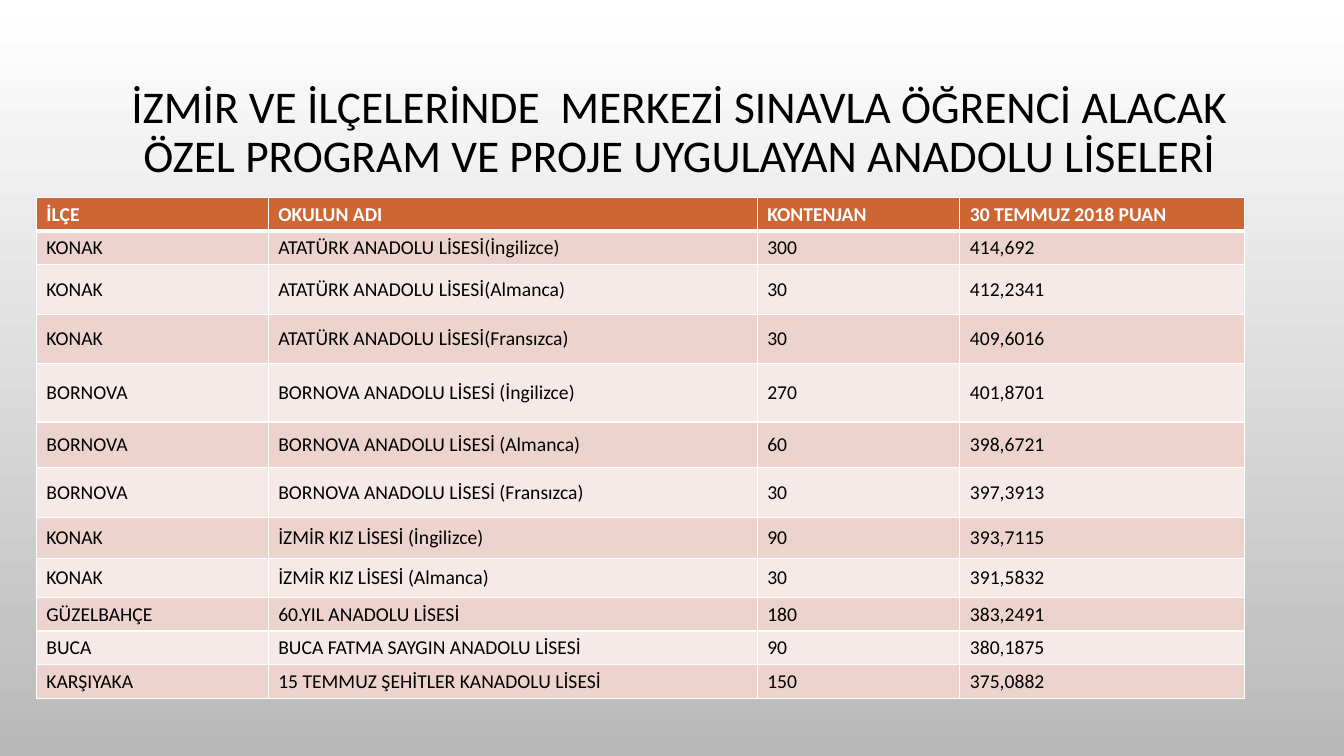
from lxml.etree import SubElement
from pptx import Presentation
from pptx.dml.color import RGBColor
from pptx.enum.text import MSO_ANCHOR, PP_ALIGN
from pptx.oxml.ns import qn
from pptx.util import Inches, Pt

COLORS = {
    "top": "FFFFFF",
    "base": "B9B9B9",
    "text": "000000",
    "head": "CE6633",
    "odd": "EDD3CE",
    "even": "F6EAE8",
    "line": "FFFFFF",
}
TITLE = ("İZMİR VE İLÇELERİNDE  MERKEZİ SINAVLA ÖĞRENCİ ALACAK "
         "ÖZEL PROGRAM VE PROJE UYGULAYAN ANADOLU LİSELERİ")
WIDTHS = [2.3, 4.85, 2.01, 2.82]
HEIGHTS = [0.26, 0.29, 0.49, 0.49, 0.58, 0.45, 0.5, 0.4, 0.39, 0.31, 0.31, 0.31]
SCHOOLS = [
    ("İLÇE", "OKULUN ADI", "KONTENJAN", "30 TEMMUZ 2018 PUAN"),
    ("KONAK", "ATATÜRK ANADOLU LİSESİ(İngilizce)", "300", "414,692"),
    ("KONAK", "ATATÜRK ANADOLU LİSESİ(Almanca)", "30", "412,2341"),
    ("KONAK", "ATATÜRK ANADOLU LİSESİ(Fransızca)", "30", "409,6016"),
    ("BORNOVA", "BORNOVA ANADOLU LİSESİ (İngilizce)", "270", "401,8701"),
    ("BORNOVA", "BORNOVA ANADOLU LİSESİ (Almanca)", "60", "398,6721"),
    ("BORNOVA", "BORNOVA ANADOLU LİSESİ (Fransızca)", "30", "397,3913"),
    ("KONAK", "İZMİR KIZ LİSESİ (İngilizce)", "90", "393,7115"),
    ("KONAK", "İZMİR KIZ LİSESİ (Almanca)", "30", "391,5832"),
    ("GÜZELBAHÇE", "60.YIL ANADOLU LİSESİ", "180", "383,2491"),
    ("BUCA", "BUCA FATMA SAYGIN ANADOLU LİSESİ", "90", "380,1875"),
    ("KARŞIYAKA", "15 TEMMUZ ŞEHİTLER KANADOLU LİSESİ", "150", "375,0882"),
]


class Deck:
    """Hold the style and the current slide."""

    def __init__(self, slide, font):
        self.slide = slide
        self.font = font

    def color(self, name):
        return RGBColor.from_string(COLORS[name])

    def backdrop(self, top, base):
        fill = self.slide.background.fill
        fill.gradient()
        fill.gradient_angle = 270
        for stop, name in zip(fill.gradient_stops, (top, base)):
            stop.color.rgb = self.color(name)

    def run(self, para, text, size, color, bold=False):
        run = para.add_run()
        run.text = text
        run.font.name = self.font
        run.font.size = Pt(size)
        run.font.bold = bold
        run.font.color.rgb = self.color(color)

    def title(self, text, left, top, width, height):
        box = self.slide.shapes.add_textbox(
            Inches(left), Inches(top), Inches(width), Inches(height))
        frame = box.text_frame
        frame.word_wrap = True
        frame.vertical_anchor = MSO_ANCHOR.MIDDLE
        para = frame.paragraphs[0]
        para.alignment = PP_ALIGN.CENTER
        para.line_spacing = 0.9
        self.run(para, text, 32.4, "text")

    def border(self, cell, side, width):
        props = cell._tc.get_or_add_tcPr()
        line = SubElement(props, qn(f"a:ln{side}"), w=str(Pt(width)))
        fill = SubElement(line, qn("a:solidFill"))
        SubElement(fill, qn("a:srgbClr"), val=COLORS["line"])

    def cell(self, cell, text, row):
        head = row == 0
        thick = {"T": 3 if row == 1 else 1, "B": 3 if head else 1}
        for side in "LRTB":
            self.border(cell, side, thick.get(side, 1))
        cell.fill.solid()
        band = "head" if head else "odd" if row % 2 else "even"
        cell.fill.fore_color.rgb = self.color(band)
        cell.vertical_anchor = MSO_ANCHOR.TOP if head else MSO_ANCHOR.MIDDLE
        ink = "line" if head else "text"
        self.run(cell.text_frame.paragraphs[0], text, 14, ink, head)

    def table(self, data, left, top, widths, heights):
        table = self.slide.shapes.add_table(
            len(data), len(widths), Inches(left), Inches(top),
            Inches(sum(widths)), Inches(sum(heights))).table
        for col, width in zip(table.columns, widths):
            col.width = Inches(width)
        for row, height in zip(table.rows, heights):
            row.height = Inches(height)
        for r, line in enumerate(data):
            for c, text in enumerate(line):
                self.cell(table.cell(r, c), text, r)


def main():
    prs = Presentation()
    prs.slide_width = Inches(13.33)
    prs.slide_height = Inches(7.5)
    deck = Deck(prs.slides.add_slide(prs.slide_layouts[6]), "Calibri")
    deck.backdrop("top", "base")
    deck.title(TITLE, 1.15, 0.68, 11.18, 1.29)
    deck.table(SCHOOLS, 0.36, 1.96, WIDTHS, HEIGHTS)
    prs.save("out.pptx")


if __name__ == "__main__":
    main()
